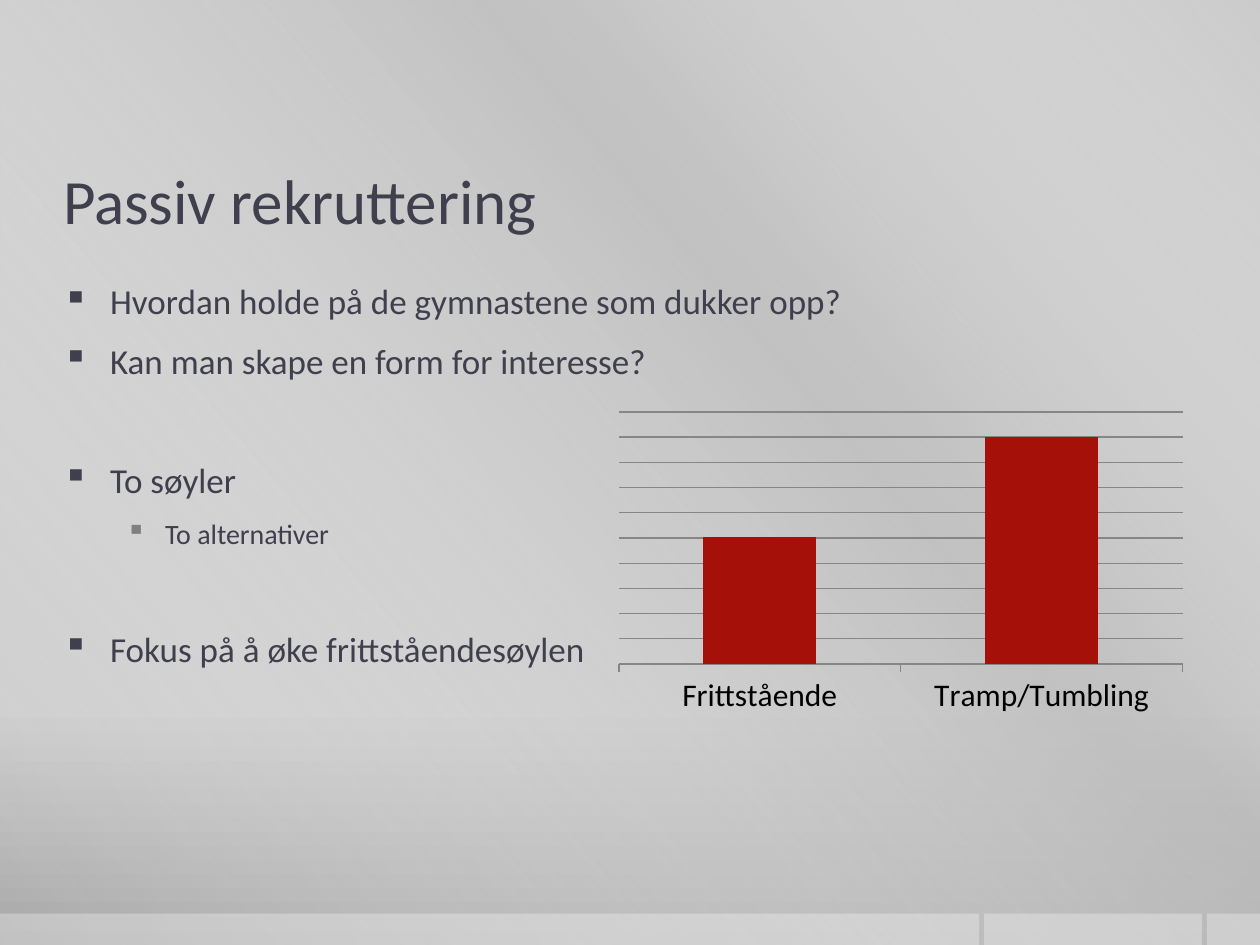
from dataclasses import dataclass

from lxml import etree
from pptx import Presentation
from pptx.chart.data import CategoryChartData
from pptx.dml.color import RGBColor
from pptx.enum.chart import XL_CHART_TYPE, XL_TICK_LABEL_POSITION, XL_TICK_MARK
from pptx.enum.shapes import MSO_SHAPE
from pptx.enum.text import MSO_ANCHOR, PP_ALIGN
from pptx.oxml import parse_xml
from pptx.oxml.ns import nsdecls, qn
from pptx.util import Cm, Pt

RECT = MSO_SHAPE.RECTANGLE
STACKED = XL_CHART_TYPE.COLUMN_STACKED
TICK_OUT, TICK_NONE = XL_TICK_MARK.OUTSIDE, XL_TICK_MARK.NONE
LABELS_LOW = XL_TICK_LABEL_POSITION.LOW
LEFT, TOP, MIDDLE = PP_ALIGN.LEFT, MSO_ANCHOR.TOP, MSO_ANCHOR.MIDDLE

WIDTH, HEIGHT = 25.4, 19.05
MARGIN = 1.27
BAND_TOP, BAND_GAP = 18.42, 0.1
BAND_ENDS = (19.74, 24.23, WIDTH)
PLOT = {"x": 0.032, "y": 0.056, "w": 0.936, "h": 0.739}
BULLETS = (
    ("Hvordan holde på de gymnastene som dukker opp?", 0, 0),
    ("Kan man skape en form for interesse?", 0, 4),
    ("To søyler", 0, 38),
    ("To alternativer", 1, 3.2),
    ("Fokus på å øke frittståendesøylen", 0, 38),
)


@dataclass(frozen=True)
class Theme:
    """Colours, font and type sizes of the slide."""
    font: str = "Calibri"
    ink: str = "3F3F4D"
    bullet: str = "808080"
    axis: str = "000000"
    grid: str = "868686"
    bar: str = "A51009"
    band: str = "FFFFFF"
    title: int = 36
    levels: tuple = (20, 16)
    chart: int = 18
    indents: tuple = ((0.95, 0.95), (2.06, 0.79))
    backdrop: tuple = ((0, "CBCBCB", 100), (76, "C8C8C8", 100), (100, "A7A7A7", 100))
    sheen: tuple = ((0, "FFFFFF", 0), (34, "BFBFBF", 61), (38, "BFBFBF", 76), (100, "FFFFFF", 0))


def write(p, text, font, size, color, before=0, after=0):
    """Write one formatted run into a paragraph."""
    p.alignment = LEFT
    p.space_before, p.space_after = Pt(before), Pt(after)
    r = p.add_run()
    r.text = text
    r.font.name, r.font.size = font, Pt(size)
    r.font.color.rgb = RGBColor.from_string(color)


def set_gradient(fill, parent, stops, angle):
    """Give a fill its gradient stops, opacities and angle."""
    fill.gradient()
    grad = parent.find(".//" + qn("a:gradFill"))
    gs_lst = grad.find(qn("a:gsLst"))
    for gs in list(gs_lst):
        gs_lst.remove(gs)
    for pos, color, alpha in stops:
        gs = etree.SubElement(gs_lst, qn("a:gs"), pos=str(pos * 1000))
        clr = etree.SubElement(gs, qn("a:srgbClr"), val=color)
        etree.SubElement(clr, qn("a:alpha"), val=str(alpha * 1000))
    grad.find(qn("a:lin")).set("ang", str(angle * 60000))


class Deck:
    """Hold the theme and the current slide."""

    def __init__(self, prs, theme):
        """Start a title-only slide with its backdrop."""
        self.theme = theme
        self.s = prs.slides.add_slide(prs.slide_layouts[5])
        fill = self.s.background.fill
        set_gradient(fill, self.s._element.cSld.bg, theme.backdrop, 90)

    def rect(self, x, y, w, h):
        """Add a rectangle without line or shadow."""
        sp = self.s.shapes.add_shape(RECT, Cm(x), Cm(y), Cm(w), Cm(h))
        sp.shadow.inherit = False
        sp.line.fill.background()
        return sp

    def sheen(self):
        """Lay the diagonal sheen over the whole slide."""
        sp = self.rect(0, 0, WIDTH, HEIGHT)
        set_gradient(sp.fill, sp._element.spPr, self.theme.sheen, 140)

    def band(self, x, end):
        """Add one translucent piece of the bottom band."""
        sp = self.rect(x, BAND_TOP, end - x, HEIGHT - BAND_TOP)
        sp.fill.solid()
        sp.fill.fore_color.rgb = RGBColor.from_string(self.theme.band)
        clr = sp._element.spPr.find(".//" + qn("a:srgbClr"))
        etree.SubElement(clr, qn("a:alpha"), val="30000")

    def frame(self, sp, anchor):
        """Set the insets, wrapping and anchor of a text frame."""
        tf = sp.text_frame
        tf.word_wrap, tf.vertical_anchor = True, anchor
        tf.margin_left = tf.margin_right = 0
        tf.margin_top = tf.margin_bottom = Cm(0.13)
        return tf

    def title(self, text, x, y, w, h):
        """Place and fill the title in front of the backdrop."""
        sp = self.s.shapes.title
        self.s.shapes._spTree.append(sp._element)
        sp.left, sp.top, sp.width, sp.height = Cm(x), Cm(y), Cm(w), Cm(h)
        p = self.frame(sp, MIDDLE).paragraphs[0]
        write(p, text, self.theme.font, self.theme.title, self.theme.ink)

    def bullets(self, items, x, y, w, h):
        """Add a two-level bullet list."""
        t = self.theme
        tf = self.frame(self.s.shapes.add_textbox(Cm(x), Cm(y), Cm(w), Cm(h)), TOP)
        for i, (text, level, before) in enumerate(items):
            p = tf.add_paragraph() if i else tf.paragraphs[0]
            p.level = level
            left, hang = t.indents[level]
            pPr = p._p.get_or_add_pPr()
            pPr.set("marL", str(Cm(left)))
            pPr.set("indent", str(-Cm(hang)))
            if level:
                clr = etree.SubElement(pPr, qn("a:buClr"))
                etree.SubElement(clr, qn("a:srgbClr"), val=t.bullet)
            etree.SubElement(pPr, qn("a:buChar"), char="▪")
            write(p, text, t.font, t.levels[level], t.ink, before, after=6)

    def columns(self, cats, vals, x, y, w, h):
        """Add the column chart with gridlines and no value axis."""
        t = self.theme
        data = CategoryChartData()
        data.categories = cats
        data.add_series("Series 1", vals)
        chart = self.s.shapes.add_chart(STACKED, Cm(x), Cm(y), Cm(w), Cm(h), data).chart
        chart.has_legend = chart.has_title = False
        chart.font.name, chart.font.size = t.font, Pt(t.chart)
        chart.font.color.rgb = RGBColor.from_string(t.axis)
        plot = chart.plots[0]
        plot.gap_width, plot.overlap, plot.vary_by_categories = 150, 100, False
        fill = plot.series[0].format.fill
        fill.solid()
        fill.fore_color.rgb = RGBColor.from_string(t.bar)
        val, cat = chart.value_axis, chart.category_axis
        val.visible, val.has_major_gridlines = False, True
        val.minimum_scale, val.maximum_scale, val.major_unit = 0, 111, 11.1
        cat.major_tick_mark, cat.minor_tick_mark = TICK_OUT, TICK_NONE
        cat.tick_label_position = LABELS_LOW
        for line in (val.major_gridlines.format.line, cat.format.line):
            line.color.rgb = RGBColor.from_string(t.grid)
            line.width = Pt(0.75)
        area = chart._chartSpace.chart.plotArea
        for old in area.findall(qn("c:layout")):
            area.remove(old)
        sizes = "".join(f'<c:{k} val="{v}"/>' for k, v in PLOT.items())
        area.insert(0, parse_xml(
            f'<c:layout {nsdecls("c")}><c:manualLayout><c:layoutTarget val="inner"/>'
            f'<c:xMode val="edge"/><c:yMode val="edge"/>{sizes}'
            "</c:manualLayout></c:layout>"))


def main():
    """Build and save the slide."""
    prs = Presentation()
    prs.slide_width, prs.slide_height = Cm(WIDTH), Cm(HEIGHT)
    deck = Deck(prs, Theme())
    deck.sheen()
    x = 0
    for end in BAND_ENDS:
        deck.band(x, end)
        x = end + BAND_GAP
    text_width = WIDTH - 2 * MARGIN
    deck.title("Passiv rekruttering", MARGIN, 2.74, text_width, 2.54)
    deck.bullets(BULLETS, MARGIN, 5.51, text_width, 11.51)
    deck.columns(("Frittstående", "Tramp/Tumbling"), (56, 100), 12.09, 7.92, 12.14, 6.88)
    prs.save("out.pptx")


if __name__ == "__main__":
    main()
